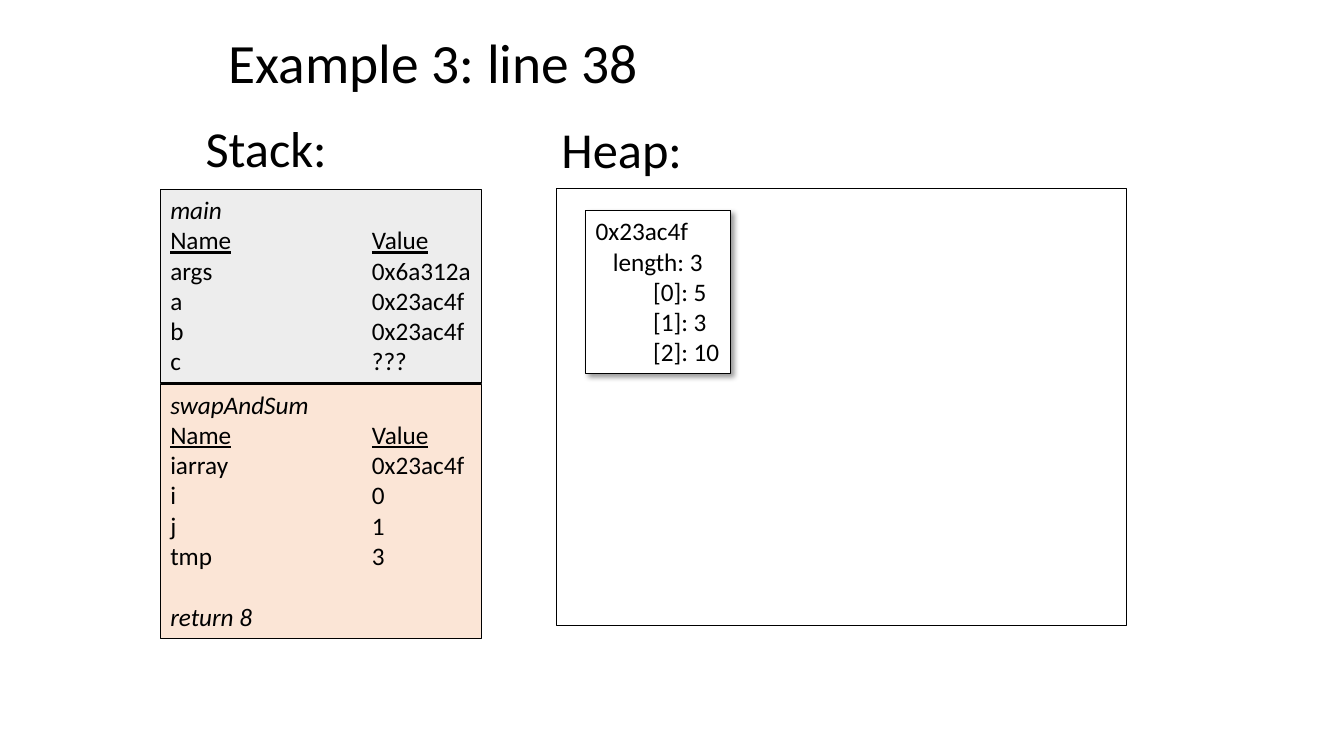
from lxml.etree import SubElement
from pptx import Presentation
from pptx.dml.color import RGBColor
from pptx.enum.shapes import MSO_SHAPE
from pptx.enum.text import MSO_ANCHOR, MSO_AUTO_SIZE, PP_ALIGN
from pptx.oxml.ns import qn
from pptx.util import Inches, Pt

COLORS = {"ink": "000000", "main": "EDEDED", "call": "FBE5D6", "object": "FFFFFF"}
FONT = "Calibri"
BODY_SIZE = 18
HEADING_SIZE = 36
TITLE_SIZE = 39.6
STACK_LEFT, STACK_WIDTH = 1.59, 3.19
VALUE_TAB = 2


def color(name):
    """Return the named palette colour."""
    return RGBColor.from_string(COLORS[name])


def add_run(paragraph, text, size=BODY_SIZE, italic=False, underline=False):
    """Append one formatted run to a paragraph."""
    run = paragraph.add_run()
    run.text = text
    run.font.name = FONT
    run.font.size = Pt(size)
    run.font.italic = italic
    run.font.underline = underline
    run.font.color.rgb = color("ink")


def next_paragraph(frame):
    """Return the first paragraph while it is empty, otherwise a new one."""
    paragraph = frame.paragraphs[0]
    if paragraph.runs:
        paragraph = frame.add_paragraph()
    paragraph.alignment = PP_ALIGN.LEFT
    return paragraph


def set_title(slide, text):
    """Place and format the title placeholder."""
    title = slide.shapes.title
    title.left, title.top = Inches(2.17), Inches(0.3)
    title.width, title.height = Inches(9), Inches(0.7)
    frame = title.text_frame
    frame.auto_size = MSO_AUTO_SIZE.NONE
    frame.vertical_anchor = MSO_ANCHOR.MIDDLE
    paragraph = next_paragraph(frame)
    paragraph.line_spacing = 0.9
    add_run(paragraph, text, TITLE_SIZE)


def add_heading(slide, text, left, top):
    """Add a heading above one of the memory areas."""
    box = slide.shapes.add_textbox(Inches(left), Inches(top), Inches(1.4), Inches(0.71))
    box.text_frame.word_wrap = True
    add_run(next_paragraph(box.text_frame), text, HEADING_SIZE)


def add_box(slide, left, top, width, height, fill=None):
    """Add an outlined rectangle with top-left text."""
    box = slide.shapes.add_shape(
        MSO_SHAPE.RECTANGLE, Inches(left), Inches(top), Inches(width), Inches(height))
    box.shadow.inherit = False
    if fill:
        box.fill.solid()
        box.fill.fore_color.rgb = color(fill)
    else:
        box.fill.background()
    box.line.color.rgb = color("ink")
    box.line.width = Pt(0.75)
    box.text_frame.word_wrap = True
    box.text_frame.vertical_anchor = MSO_ANCHOR.TOP
    return box


def add_row(frame, name, value, underline=False):
    """Add a name and a value aligned on a tab stop."""
    paragraph = next_paragraph(frame)
    tabs = SubElement(paragraph._p.get_or_add_pPr(), qn("a:tabLst"))
    SubElement(tabs, qn("a:tab"), pos=str(Inches(VALUE_TAB)), algn="l")
    add_run(paragraph, name, underline=underline)
    add_run(paragraph, "\t")
    add_run(paragraph, value, underline=underline)


def add_stack_frame(slide, top, height, fill, method, variables, result=None):
    """Add a stack frame listing the variables of one method call."""
    frame = add_box(slide, STACK_LEFT, top, STACK_WIDTH, height, fill).text_frame
    add_run(next_paragraph(frame), method, italic=True)
    add_row(frame, "Name", "Value", underline=True)
    for name, value in variables:
        add_row(frame, name, value)
    if result:
        paragraph = next_paragraph(frame)
        paragraph.space_before = Pt(22)
        add_run(paragraph, result, italic=True)


def add_shadow(shape):
    """Give a shape a soft shadow to the lower right."""
    effects = shape._element.spPr.find(qn("a:effectLst"))
    shadow = SubElement(effects, qn("a:outerShdw"), blurRad=str(Pt(4)), dist=str(Pt(3)),
                        dir="2700000", algn="tl", rotWithShape="0")
    shade = SubElement(shadow, qn("a:srgbClr"), val=COLORS["ink"])
    SubElement(shade, qn("a:alpha"), val="40000")


def add_heap_array(slide, address, values):
    """Add an array object with its address, length and elements."""
    box = add_box(slide, 5.81, 2.09, 1.44, 1.62, "object")
    add_shadow(box)
    frame = box.text_frame
    frame.word_wrap = False
    lines = [(address, 0), (f"length: {len(values)}", 0.17)]
    lines += [(f"[{index}]: {value}", 0.57) for index, value in enumerate(values)]
    for text, indent in lines:
        paragraph = next_paragraph(frame)
        paragraph._p.get_or_add_pPr().set("marL", str(Inches(indent)))
        add_run(paragraph, text)


def main():
    """Build the stack and heap slide."""
    presentation = Presentation()
    presentation.slide_width = Inches(13.33)
    presentation.slide_height = Inches(7.5)
    slide = presentation.slides.add_slide(presentation.slide_layouts[5])
    set_title(slide, "Example 3: line 38")
    add_heading(slide, "Stack:", 1.94, 1.11)
    add_heading(slide, "Heap:", 5.47, 1.12)
    add_stack_frame(slide, 1.88, 1.92, "main", "main", [
        ("args", "0x6a312a"), ("a", "0x23ac4f"), ("b", "0x23ac4f"), ("c", "???")])
    add_box(slide, 5.52, 1.87, 5.65, 4.34)
    add_heap_array(slide, "0x23ac4f", [5, 3, 10])
    add_stack_frame(slide, 3.81, 2.52, "call", "swapAndSum", [
        ("iarray", "0x23ac4f"), ("i", "0"), ("j", "1"), ("tmp", "3")], "return 8")
    presentation.save("out.pptx")


if __name__ == "__main__":
    main()
